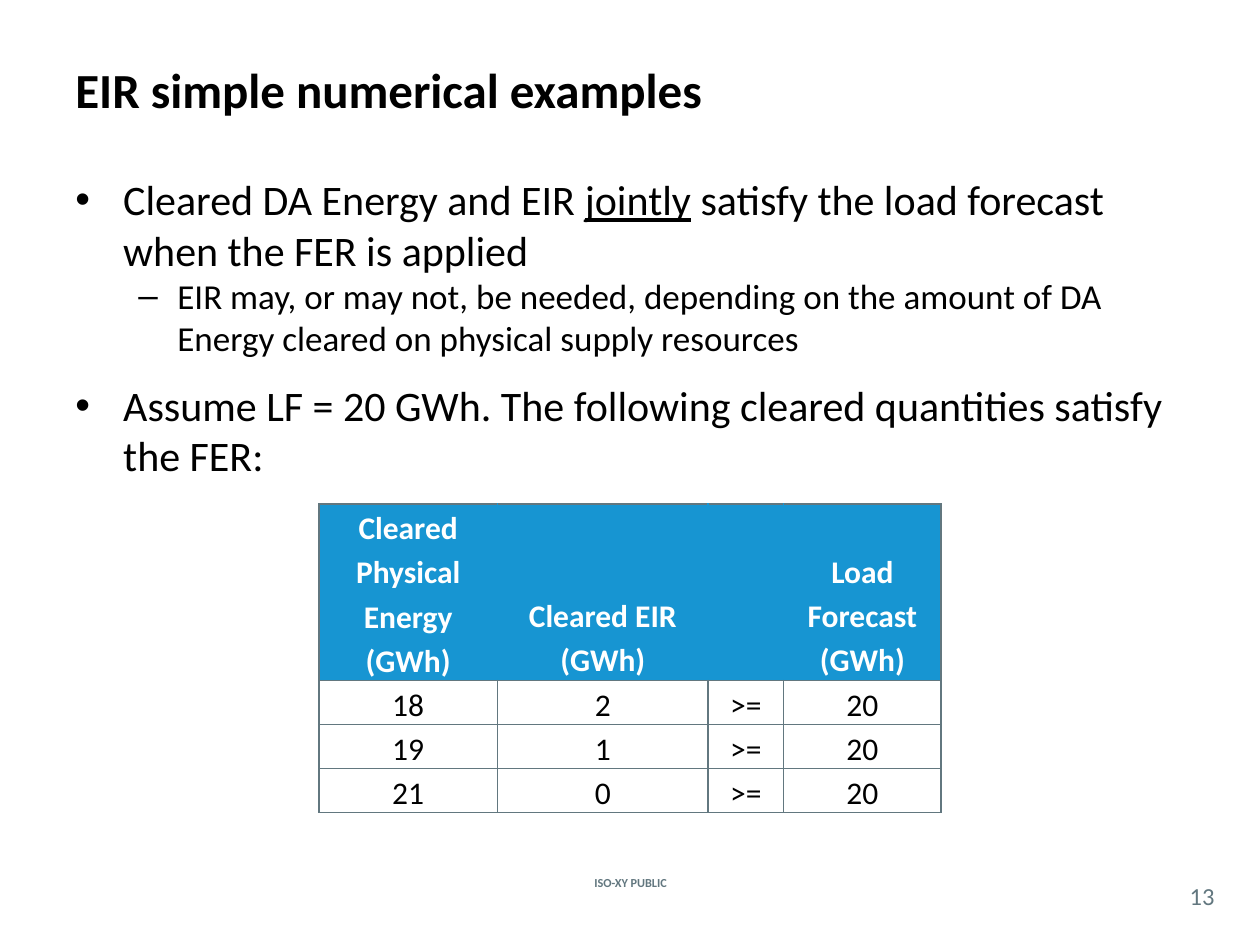
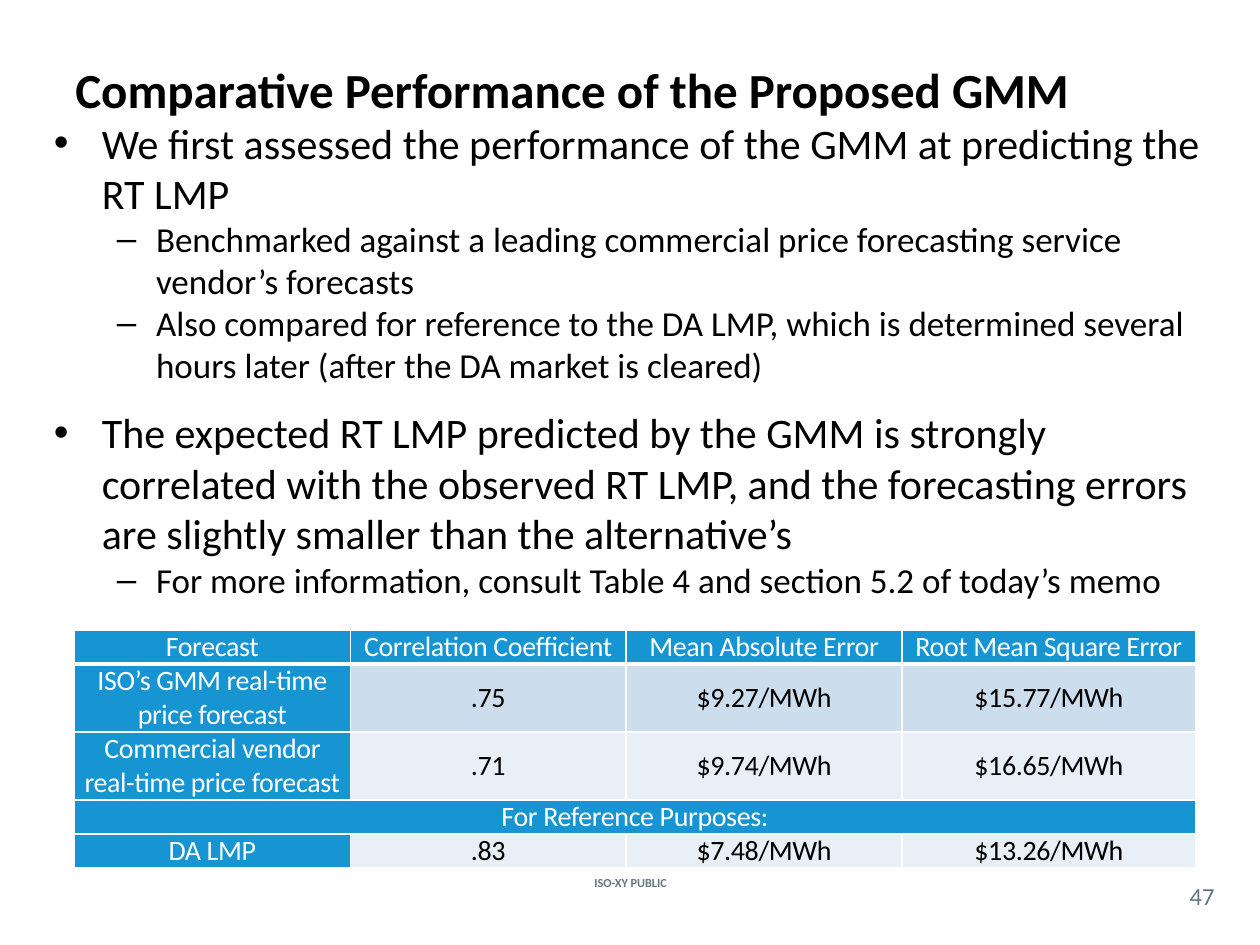
"""Build two market design slides with bullets and tables."""
from dataclasses import dataclass

from lxml.etree import SubElement
from pptx import Presentation
from pptx.dml.color import RGBColor as Rgb
from pptx.enum.text import MSO_ANCHOR as Anchor, PP_ALIGN as Align
from pptx.oxml.ns import qn
from pptx.util import Inches, Pt

COLORS = {
    "ink": "000000",
    "white": "FFFFFF",
    "slate": "62777F",
    "blue": "1795D2",
    "light": "CCDDEE",
    "pale": "E8EFF7",
}
FONT = "Calibri"
SIDES = ("L", "R", "T", "B")


@dataclass
class Style:
    size: float
    color: str = "ink"
    bold: bool = False
    track: int = 0


@dataclass
class Box:
    left: float
    top: float
    width: float
    height: float


@dataclass
class Level:
    mark: str
    margin: float
    hang: float
    before: float
    style: Style


@dataclass
class Bullet:
    text: str
    level: int = 0


@dataclass
class Cell:
    text: str
    style: Style
    fill: str
    anchor: Anchor
    lines: dict


@dataclass
class Grid:
    left: float
    top: float
    cols: list
    rows: list
    cells: list
    space: float = 1.0


TITLE = Style(28, bold=True)
LABEL = Style(7, "slate", True)
PAGE = Style(14, "slate")
LEVELS = (
    Level("•", 0.38, 0.38, 12, Style(24)),
    Level("–", 0.81, 0.31, 0, Style(20)),
)


def paint(run, style: Style) -> None:
    font = run.font
    font.name, font.size, font.bold = FONT, Pt(style.size), style.bold
    font.color.rgb = Rgb.from_string(COLORS[style.color])
    if style.track:
        run._r.get_or_add_rPr().set("spc", str(style.track))


def add_box(slide, box: Box):
    shape = slide.shapes.add_textbox(
        Inches(box.left), Inches(box.top), Inches(box.width), Inches(box.height)
    )
    shape.text_frame.word_wrap = True
    return shape.text_frame


def add_label(slide, box: Box, text: str, style: Style,
              align=Align.CENTER, inset: bool = True) -> None:
    frame = add_box(slide, box)
    frame.vertical_anchor = Anchor.MIDDLE
    if not inset:
        frame.margin_left = frame.margin_right = 0
        frame.margin_top = frame.margin_bottom = 0
    frame.text = text
    line = frame.paragraphs[0]
    line.alignment = align
    paint(line.runs[0], style)


def add_bullets(slide, box: Box, items: list) -> None:
    frame = add_box(slide, box)
    for row, item in enumerate(items):
        level = LEVELS[item.level]
        line = frame.add_paragraph() if row else frame.paragraphs[0]
        line.level = item.level
        if row:
            line.space_before = Pt(level.before)
        props = line._p.get_or_add_pPr()
        props.set("marL", str(Inches(level.margin)))
        props.set("indent", str(-Inches(level.hang)))
        SubElement(props, qn("a:buFont"), typeface="Arial")
        SubElement(props, qn("a:buChar"), char=level.mark)
        for part, text in enumerate(item.text.split("_")):
            run = line.add_run()
            run.text = text
            paint(run, level.style)
            if part % 2:
                run.font.underline = True


def edge(cell, lines: dict) -> None:
    props = cell._tc.get_or_add_tcPr()
    for spot, side in enumerate(SIDES):
        color, width = lines[side]
        line = SubElement(props, qn(f"a:ln{side}"), w=str(Pt(width)))
        fill = SubElement(line, qn("a:solidFill"))
        SubElement(fill, qn("a:srgbClr"), val=COLORS[color])
        props.insert(spot, line)


def add_grid(slide, grid: Grid) -> None:
    table = slide.shapes.add_table(
        len(grid.rows), len(grid.cols), Inches(grid.left), Inches(grid.top),
        Inches(sum(grid.cols)), Inches(sum(grid.rows)),
    ).table
    table.first_row = table.horz_banding = False
    for col, width in zip(table.columns, grid.cols):
        col.width = Inches(width)
    for row, height in zip(table.rows, grid.rows):
        row.height = Inches(height)
    for y, line in enumerate(grid.cells):
        for x, data in enumerate(line):
            cell = table.cell(y, x)
            cell.margin_left = cell.margin_right = Inches(0.07)
            cell.margin_top = cell.margin_bottom = 0
            cell.vertical_anchor = data.anchor
            cell.fill.solid()
            cell.fill.fore_color.rgb = Rgb.from_string(COLORS[data.fill])
            edge(cell, data.lines)
            cell.text_frame.text = data.text
            para = cell.text_frame.paragraphs[0]
            para.alignment = Align.CENTER
            para.line_spacing = grid.space
            for run in para.runs:
                paint(run, data.style)
        if len(line) == 1:
            table.cell(y, 0).merge(table.cell(y, len(grid.cols) - 1))


def add_page(deck, title: str, number: int, body: Box, items: list, grid: Grid) -> None:
    slide = deck.slides.add_slide(deck.slide_layouts[6])
    add_label(slide, Box(4.27, 6.92, 1.47, 0.17), "ISO-XY PUBLIC", LABEL)
    add_label(slide, Box(9.33, 6.96, 0.42, 0.29), str(number), PAGE, inset=False)
    add_label(slide, Box(0.5, 0.08, 9, 1.25), title, TITLE, Align.LEFT)
    add_bullets(slide, body, items)
    add_grid(slide, grid)


def load_grid() -> Grid:
    heads = ("Cleared Physical Energy (GWh)", "Cleared EIR (GWh)", "",
             "Load Forecast (GWh)")
    pairs = ((18, 2), (19, 1), (21, 0))
    rule = dict.fromkeys(SIDES, ("slate", 1))
    last = len(heads) - 1
    top = []
    for x, text in enumerate(heads):
        lines = dict(rule)
        if x > 0:
            lines["L"] = ("blue", 1)
        if x < last:
            lines["R"] = ("blue", 1)
        top.append(Cell(text, Style(18, "white", True), "blue", Anchor.BOTTOM, lines))
    rows = [
        [Cell(str(text), Style(18), "white", Anchor.TOP, rule)
         for text in (*pair, ">=", 20)]
        for pair in pairs
    ]
    return Grid(2.53, 4, [1.42, 1.67, 0.6, 1.25], [1.4] + [0.35] * 3,
                [top, *rows], 1.15)


def error_grid() -> Grid:
    rows = (
        ("blue", "Forecast", "Correlation Coefficient", "Mean Absolute Error",
         "Root Mean Square Error"),
        ("light", "ISO’s GMM real-time price forecast", ".75", "$9.27/MWh",
         "$15.77/MWh"),
        ("pale", "Commercial vendor real-time price forecast", ".71", "$9.74/MWh",
         "$16.65/MWh"),
        ("blue", "For Reference Purposes:"),
        ("pale", "DA LMP", ".83", "$7.48/MWh", "$13.26/MWh"),
    )
    rule = dict.fromkeys(SIDES, ("white", 1))
    thick = ("white", 3)
    cells = []
    for y, (shade, *texts) in enumerate(rows):
        lines = dict(rule)
        if y == 0:
            lines["B"] = thick
        if y == 1:
            lines["T"] = thick
        line = []
        for x, text in enumerate(texts):
            fill = shade if x else "blue"
            ink = "white" if fill == "blue" else "ink"
            line.append(Cell(text, Style(16, ink, track=-20), fill,
                             Anchor.MIDDLE, lines))
        cells.append(line)
    return Grid(0.59, 5, [2.19] * 3 + [2.33], [0.27, 0.54, 0.54, 0.27, 0.27], cells)


def main() -> None:
    deck = Presentation()
    deck.slide_width, deck.slide_height = Inches(10), Inches(7.5)
    add_page(
        deck, "EIR simple numerical examples", 13, Box(0.5, 1.33, 9, 5.33),
        [
            Bullet("Cleared DA Energy and EIR _jointly_ satisfy the load forecast "
                   "when the FER is applied"),
            Bullet("EIR may, or may not, be needed, depending on the amount of DA "
                   "Energy cleared on physical supply resources", 1),
            Bullet("Assume LF = 20 GWh. The following cleared quantities satisfy "
                   "the FER:"),
        ],
        load_grid(),
    )
    add_page(
        deck, "Comparative Performance of the Proposed GMM", 47,
        Box(0.33, 0.88, 9.42, 6),
        [
            Bullet("We first assessed the performance of the GMM at predicting the "
                   "RT LMP"),
            Bullet("Benchmarked against a leading commercial price forecasting "
                   "service vendor’s forecasts", 1),
            Bullet("Also compared for reference to the DA LMP, which is determined "
                   "several hours later (after the DA market is cleared)", 1),
            Bullet("The expected RT LMP predicted by the GMM is strongly correlated "
                   "with the observed RT LMP, and the forecasting errors are "
                   "slightly smaller than the alternative’s"),
            Bullet("For more information, consult Table 4 and section 5.2 of "
                   "today’s memo", 1),
        ],
        error_grid(),
    )
    deck.save("out.pptx")


if __name__ == "__main__":
    main()
